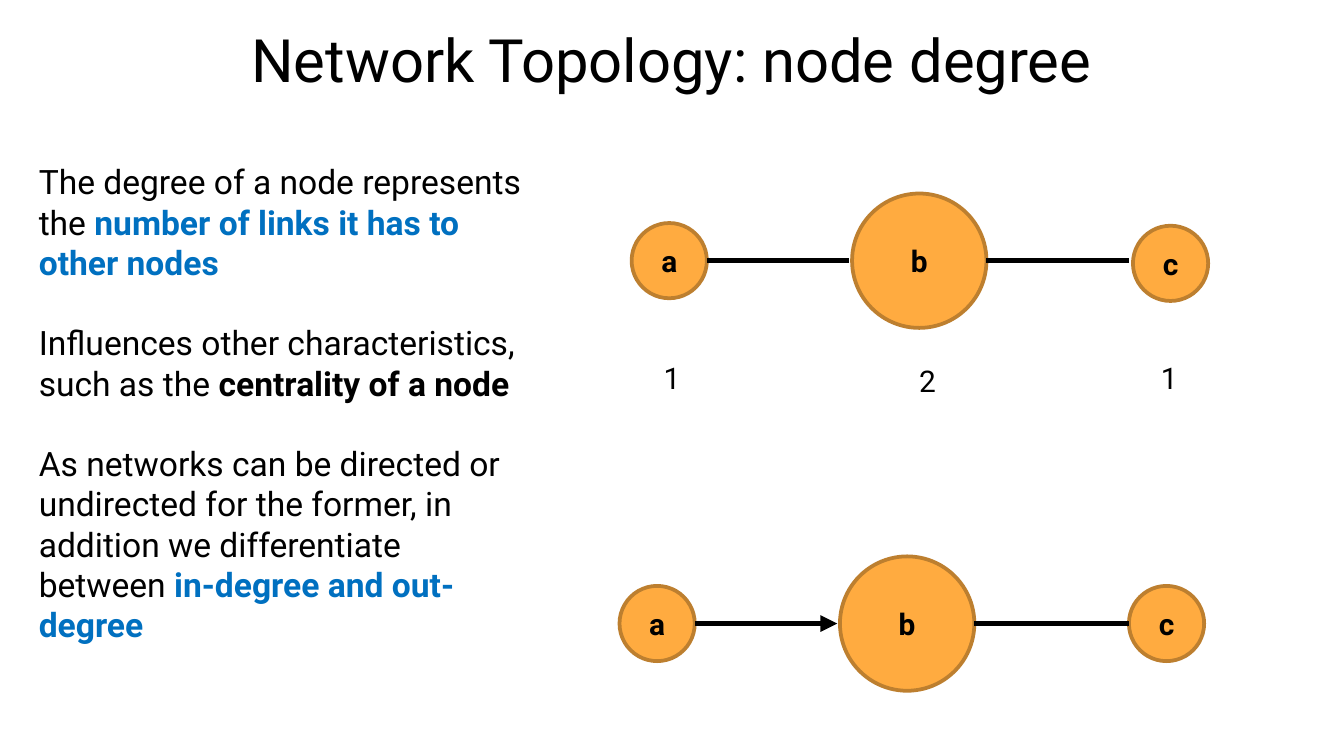
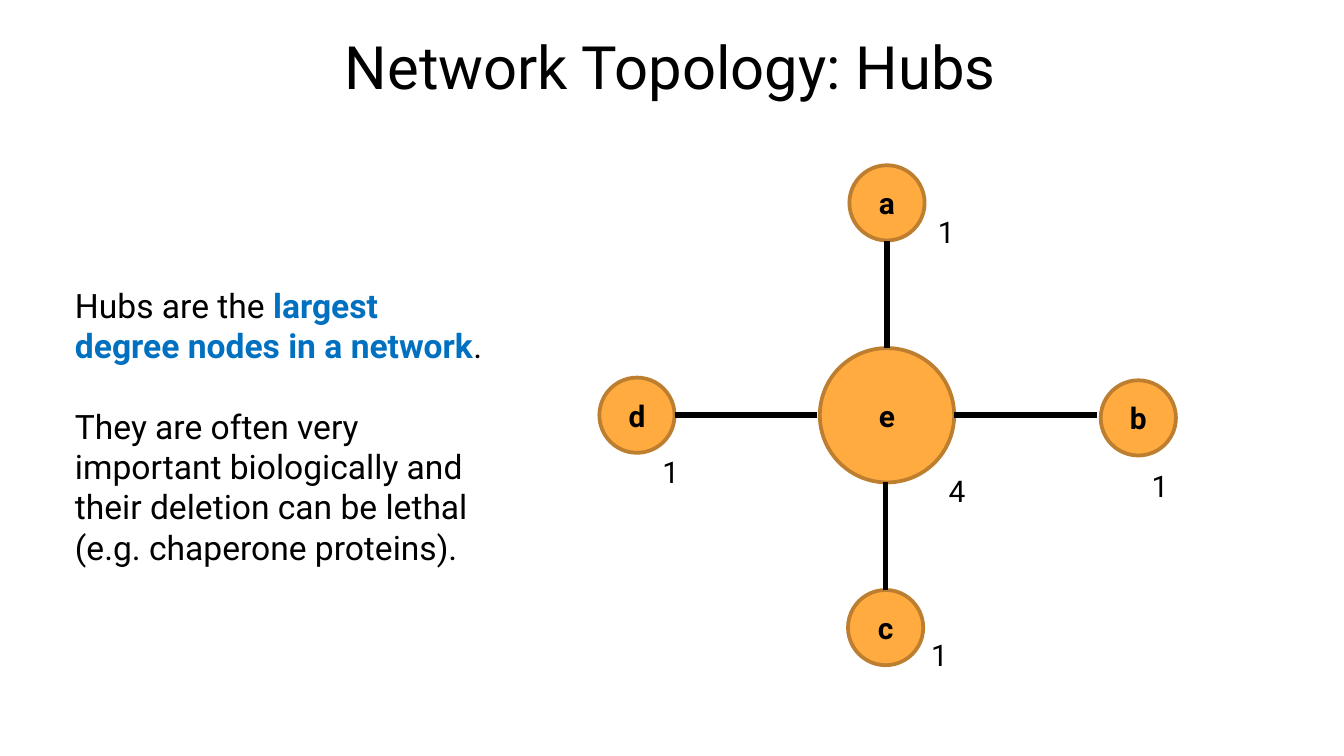
from lxml import etree
from pptx import Presentation
from pptx.dml.color import RGBColor
from pptx.enum.shapes import MSO_CONNECTOR, MSO_SHAPE
from pptx.enum.text import MSO_ANCHOR, PP_ALIGN
from pptx.oxml.ns import qn
from pptx.util import Inches, Pt

OVAL, LINE = MSO_SHAPE.OVAL, MSO_CONNECTOR.STRAIGHT
MID, CENTER, LEFT = MSO_ANCHOR.MIDDLE, PP_ALIGN.CENTER, PP_ALIGN.LEFT

BLACK, BLUE, AMBER, BROWN = "000000", "0070C0", "FFAB40", "BD7F2F"
FACE = "Roboto"
SMALL, LARGE = 0.56, 1
GAP = Pt(21.5)
HEAD = {"size": Pt(32), "bold": False}
BODY = {"size": Pt(18), "bold": False}
NODE = {"size": Pt(16), "bold": True}
TAG = {"size": Pt(16), "bold": False}


def paint(color, value):
    """Set a colour object from a hex string."""
    color.rgb = RGBColor.from_string(value)


def apply(item, values):
    """Set every named value on an item."""
    for name, value in values.items():
        setattr(item, name, value)


def write(para, text, style, hue=BLACK, bold=None):
    """Add one formatted run to a paragraph."""
    run = para.add_run()
    run.text = text
    apply(run.font, {"name": FACE, **style})
    if bold is not None:
        run.font.bold = bold
    paint(run.font.color, hue)


def label(slide, box, text, style, align=LEFT, **frame):
    """Place one line of text in a box."""
    area = slide.shapes.add_textbox(*map(Inches, box)).text_frame
    apply(area, {"word_wrap": True, **frame})
    para = area.paragraphs[0]
    para.alignment = align
    write(para, text, style)


def title(slide, box, text):
    """Place the centred slide title."""
    edge = Inches(0.1)
    label(slide, box, text, HEAD, CENTER, margin_top=edge, margin_bottom=edge)


def prose(slide, box, paras, inset=0.05):
    """Place paragraphs given as (space before, runs)."""
    area = slide.shapes.add_textbox(*map(Inches, box)).text_frame
    apply(area, {"word_wrap": True, "margin_top": Inches(inset)})
    for index, (space, runs) in enumerate(paras):
        para = area.add_paragraph() if index else area.paragraphs[0]
        if space:
            para.space_before = space
        for run in runs:
            write(para, run[0], BODY, *run[1:])


def node(slide, x, y, size, name):
    """Draw a named network node."""
    shape = slide.shapes.add_shape(OVAL, *map(Inches, (x, y, size, size)))
    shape.shadow.inherit = False
    shape.fill.solid()
    paint(shape.fill.fore_color, AMBER)
    paint(shape.line.color, BROWN)
    shape.line.width = Pt(2)
    area = shape.text_frame
    apply(area, {"vertical_anchor": MID, "word_wrap": True})
    para = area.paragraphs[0]
    para.alignment = CENTER
    write(para, name, NODE)


def link(slide, x1, y1, x2, y2, arrow=False):
    """Draw a link between two points."""
    wire = slide.shapes.add_connector(LINE, *map(Inches, (x1, y1, x2, y2)))
    paint(wire.line.color, BLACK)
    wire.line.width = Pt(3)
    props = wire.element.spPr
    if arrow:
        tail = etree.SubElement(props.find(qn("a:ln")), qn("a:tailEnd"))
        tail.set("type", "triangle")
    etree.SubElement(props, qn("a:effectLst"))


def tags(slide, x, y, items):
    """Place degree numbers at offsets from a corner."""
    for dx, dy, wide, text in items:
        label(slide, (x + dx, y + dy, wide, 0.37), text, TAG)


def chain(slide, box, names, drop=0.24, gap=0.03, arrow=False):
    """Draw a small, a large and a small node in a row."""
    x, y, wide, high = box
    mid, core, end = y + high / 2, x + 1.64, x + wide - SMALL
    spots = ((x, y + 0.22, SMALL), (core, y, LARGE), (end, y + drop, SMALL))
    for spot, name in zip(spots, names):
        node(slide, *spot, name)
    link(slide, x + SMALL, mid, core - 0.02, mid, arrow)
    link(slide, core + LARGE, mid, end - gap, mid)


def star(slide, box, row, ends):
    """Draw a hub with four neighbours."""
    x, y, wide, high = box
    top = y + 1.36
    chain(slide, (x, top, wide, LARGE), row)
    axis, low = x + 2.14, y + high - SMALL
    for shift, spot, name in zip((0, 0.01), (y, low), ends):
        node(slide, axis - shift - SMALL / 2, spot, SMALL, name)
    link(slide, axis, y + SMALL, axis, top)
    link(slide, axis - 0.01, top + LARGE, axis - 0.01, low)


def degree(slide):
    """Build the node degree slide."""
    prose(slide, (0.19, 0.85, 3.85, 4.04), (
        (None, (("The degree of a node represents the ",),
                ("number of links it has to other nodes", BLUE, True))),
        (GAP, (("Influences other characteristics, such as the ",),
               ("centrality of a node", BLACK, True))),
        (GAP, (("As networks can be directed or undirected for the former, "
                "in addition we differentiate between ",),
               ("in-degree and out-degree", BLUE, True)))), 0.35)
    chain(slide, (4.7, 1.44, 4.29, 1), "abc")
    tags(slide, 4.7, 2.63, ((0.14, 0, 0.33, "1"), (2.04, 0.02, 0.32, "2"),
                            (3.84, 0, 0.56, "1")))
    chain(slide, (4.61, 4.14, 4.35, 1), "abc", 0.22, 0, True)
    title(slide, (0.34, 0.07, 9.32, 0.63), "Network Topology: node degree")


def hubs(slide):
    """Build the hubs slide."""
    prose(slide, (0.46, 2.07, 3.46, 2.22), (
        (None, (("Hubs are the ",), ("largest", BLUE, True))),
        (None, (("degree nodes in a network", BLUE, True), (".",))),
        (GAP, (("They are often very",),)),
        (None, (("important biologically and",),)),
        (None, (("their deletion can be lethal",),)),
        (None, (("(e.g. chaperone proteins).",),))))
    title(slide, (0.33, 0.12, 9.32, 0.63), "Network Topology: Hubs")
    star(slide, (4.46, 1.23, 4.29, 3.72), "deb", "ac")
    tags(slide, 4.46, 1.23, ((0.37, 2.1, 0.33, "1"), (4.01, 2.2, 0.56, "1"),
                             (2.5, 2.24, 0.32, "4"), (2.37, 3.46, 0.33, "1"),
                             (2.42, 0.31, 0.33, "1")))


def main():
    """Build and save the deck."""
    deck = Presentation()
    wide = Inches(10)
    apply(deck, {"slide_width": wide, "slide_height": wide * 9 // 16})
    for build in (degree, hubs):
        build(deck.slides.add_slide(deck.slide_layouts[6]))
    deck.save("out.pptx")


if __name__ == "__main__":
    main()
